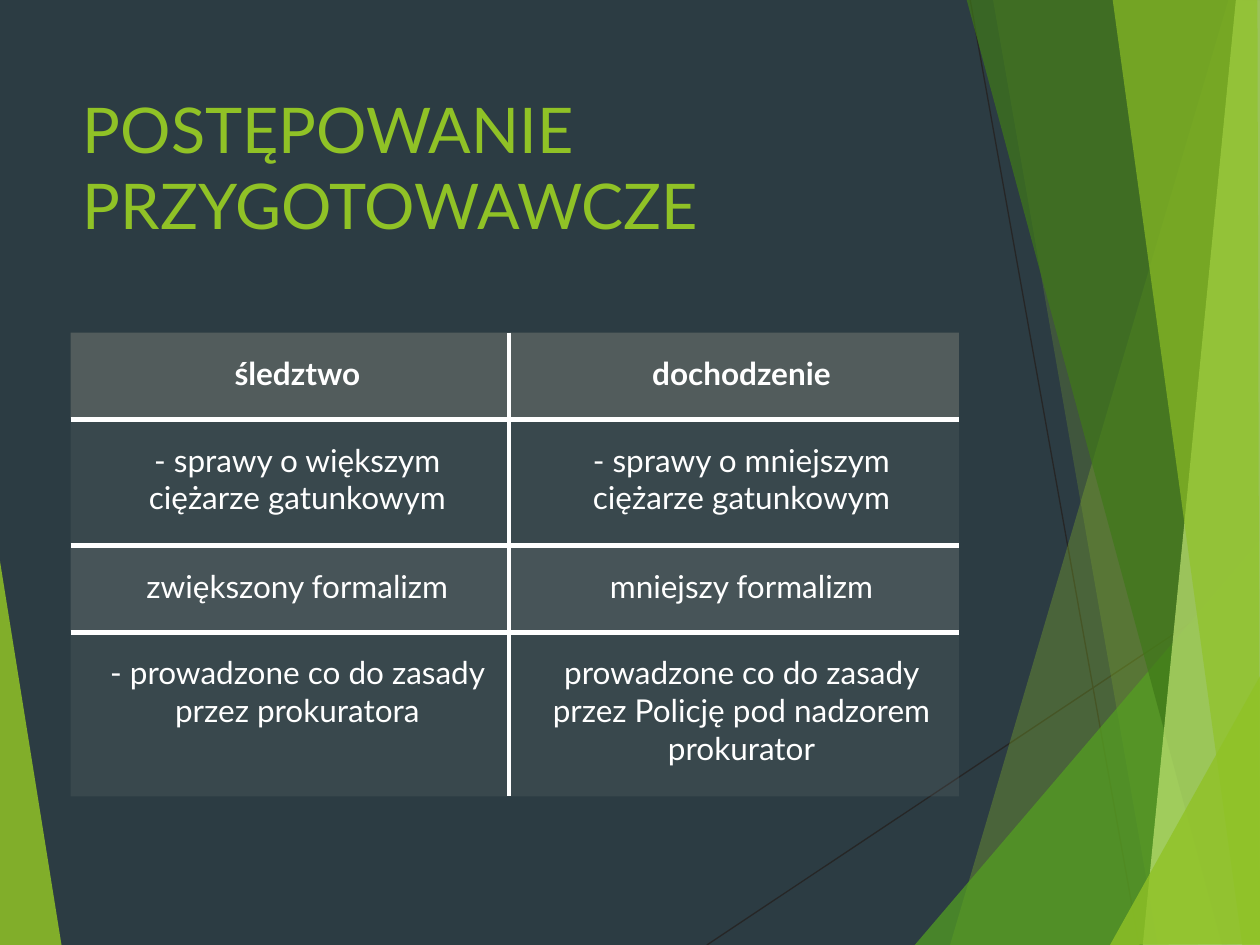
from dataclasses import dataclass

from lxml import etree
from pptx import Presentation
from pptx.dml.color import RGBColor
from pptx.enum.shapes import MSO_CONNECTOR
from pptx.enum.text import MSO_ANCHOR, PP_ALIGN
from pptx.oxml.ns import qn
from pptx.util import Inches, Pt

STRAIGHT = MSO_CONNECTOR.STRAIGHT
TOP = MSO_ANCHOR.TOP
LEFT, CENTER = PP_ALIGN.LEFT, PP_ALIGN.CENTER


@dataclass(frozen=True)
class Theme:
    font: str = "Lato"
    title_size: int = 36
    body_size: int = 18
    hairline: float = 0.75
    rule: int = 3
    background: str = "2C3C43"
    lime: str = "90C226"
    green: str = "54A021"
    forest: str = "3F7819"
    pale: str = "C0E474"
    dark: str = "262626"
    white: str = "FFFFFF"
    header: str = "636B68"
    band: str = "878E8B"


class SlideBuilder:
    def __init__(self, slide, theme):
        self.s = slide
        self.t = theme

    def background(self):
        fill = self.s.background.fill
        fill.solid()
        fill.fore_color.rgb = RGBColor.from_string(self.t.background)

    def paint(self, fill, parent, color, opacity):
        """Solid fill with an opacity in percent."""
        fill.solid()
        fill.fore_color.rgb = RGBColor.from_string(color)
        clr = parent.find(qn("a:solidFill")).find(qn("a:srgbClr"))
        etree.SubElement(clr, qn("a:alpha"), val=str(opacity * 1000))

    def add_text(self, tf, text, size, color, align, bold=False):
        tf.word_wrap = True
        p = tf.paragraphs[0]
        p.alignment = align
        r = p.add_run()
        r.text = text
        r.font.name = self.t.font
        r.font.size = Pt(size)
        r.font.bold = bold
        r.font.color.rgb = RGBColor.from_string(color)

    def line(self, x1, y1, x2, y2):
        sp = self.s.shapes.add_connector(
            STRAIGHT, Inches(x1), Inches(y1), Inches(x2), Inches(y2))
        sp.line.color.rgb = RGBColor.from_string(self.t.dark)
        sp.line.width = Pt(self.t.hairline)
        etree.SubElement(sp._element.spPr, qn("a:effectLst"))

    def facet(self, points, color, opacity):
        start, *rest = [(Inches(x), Inches(y)) for x, y in points]
        builder = self.s.shapes.build_freeform(*start)
        builder.add_line_segments(rest, close=True)
        sp = builder.convert_to_shape()
        sp.shadow.inherit = False
        self.paint(sp.fill, sp._element.spPr, color, opacity)
        sp.line.fill.background()

    def title(self, text, x, y, w, h):
        sp = self.s.shapes.add_textbox(Inches(x), Inches(y), Inches(w), Inches(h))
        sp.text_frame.vertical_anchor = TOP
        self.add_text(sp.text_frame, text, self.t.title_size, self.t.lime, LEFT)

    def borders(self, tcPr, shown):
        """Rules on the sides named in shown, none on the others."""
        for i, side in enumerate("LRTB"):
            ln = etree.Element(qn(f"a:ln{side}"), w=str(Pt(self.t.rule)))
            if side in shown:
                fill = etree.SubElement(ln, qn("a:solidFill"))
                etree.SubElement(fill, qn("a:srgbClr"), val=self.t.white)
            else:
                etree.SubElement(ln, qn("a:noFill"))
            tcPr.insert(i, ln)

    def table(self, rows, x, y, col_widths, row_heights, fills):
        n_rows, n_cols = len(rows), len(col_widths)
        table = self.s.shapes.add_table(
            n_rows, n_cols, Inches(x), Inches(y),
            Inches(sum(col_widths)), Inches(sum(row_heights))).table
        table.first_row = table.horz_banding = False
        for col, width in zip(table.columns, col_widths):
            col.width = Inches(width)
        for row, height in zip(table.rows, row_heights):
            row.height = Inches(height)
        for i, texts in enumerate(rows):
            for j, text in enumerate(texts):
                cell = table.cell(i, j)
                cell.margin_left = Inches(0.29)
                cell.margin_right = cell.margin_top = cell.margin_bottom = Inches(0.17)
                cell.vertical_anchor = TOP
                self.add_text(cell.text_frame, text, self.t.body_size,
                              self.t.white, CENTER, bold=i == 0)
                tcPr = cell._tc.get_or_add_tcPr()
                self.paint(cell.fill, tcPr, *fills[i])
                # Only the inner grid is ruled
                inner = {"L": j > 0, "R": j < n_cols - 1,
                         "T": i > 0, "B": i < n_rows - 1}
                self.borders(tcPr, [side for side, on in inner.items() if on])


def main():
    theme = Theme()
    prs = Presentation()
    prs.slide_width, prs.slide_height = Inches(10), Inches(7.5)
    slide = SlideBuilder(prs.slides.add_slide(prs.slide_layouts[6]), theme)
    slide.background()

    # Thin lines behind the facets
    slide.line(5.61, 7.5, 10.01, 4.57)
    slide.line(7.7, 0, 9.04, 7.5)

    # Translucent facets, back to front
    facets = [
        ([(-0.01, 4.39), (0.49, 7.51), (-0.01, 7.5)], theme.lime, 85),
        ([(9.75, 0), (7.54, 7.5), (10.02, 7.51), (10.01, 0.01)], theme.lime, 30),
        ([(7.88, -0.01), (9.19, 7.5), (10.01, 7.5), (10.01, -0.01)], theme.lime, 20),
        ([(7.26, 7.5), (10, 4.29), (10.01, 7.5)], theme.green, 72),
        ([(7.67, -0.01), (9.7, 7.5), (10.01, 7.49), (10.01, -0.01)], theme.forest, 70),
        ([(9.81, -0.01), (9.07, 7.5), (10.01, 7.5), (10, -0.01)], theme.pale, 70),
        ([(8.83, -0.01), (9.86, 7.5), (10, 7.5), (9.98, -0.01)], theme.lime, 65),
        ([(8.81, 7.5), (10.01, 5.35), (10.01, 7.49)], theme.lime, 80),
    ]
    for points, color, opacity in facets:
        slide.facet(points, color, opacity)

    # Title
    slide.title("POSTĘPOWANIE PRZYGOTOWAWCZE", 0.56, 0.67, 7.05, 1.44)

    # Comparison table
    rows = [
        ("śledztwo", "dochodzenie"),
        ("- sprawy o większym ciężarze gatunkowym",
         "- sprawy o mniejszym ciężarze gatunkowym"),
        ("zwiększony formalizm", "mniejszy formalizm"),
        ("- prowadzone co do zasady przez prokuratora",
         "prowadzone co do zasady przez Policję pod nadzorem prokurator"),
    ]
    fills = [(theme.header, 70), (theme.band, 15), (theme.band, 30), (theme.band, 15)]
    slide.table(rows, 0.56, 2.64, [3.48, 3.57], [0.69, 1, 0.69, 1.3], fills)

    prs.save("out.pptx")


if __name__ == "__main__":
    main()
